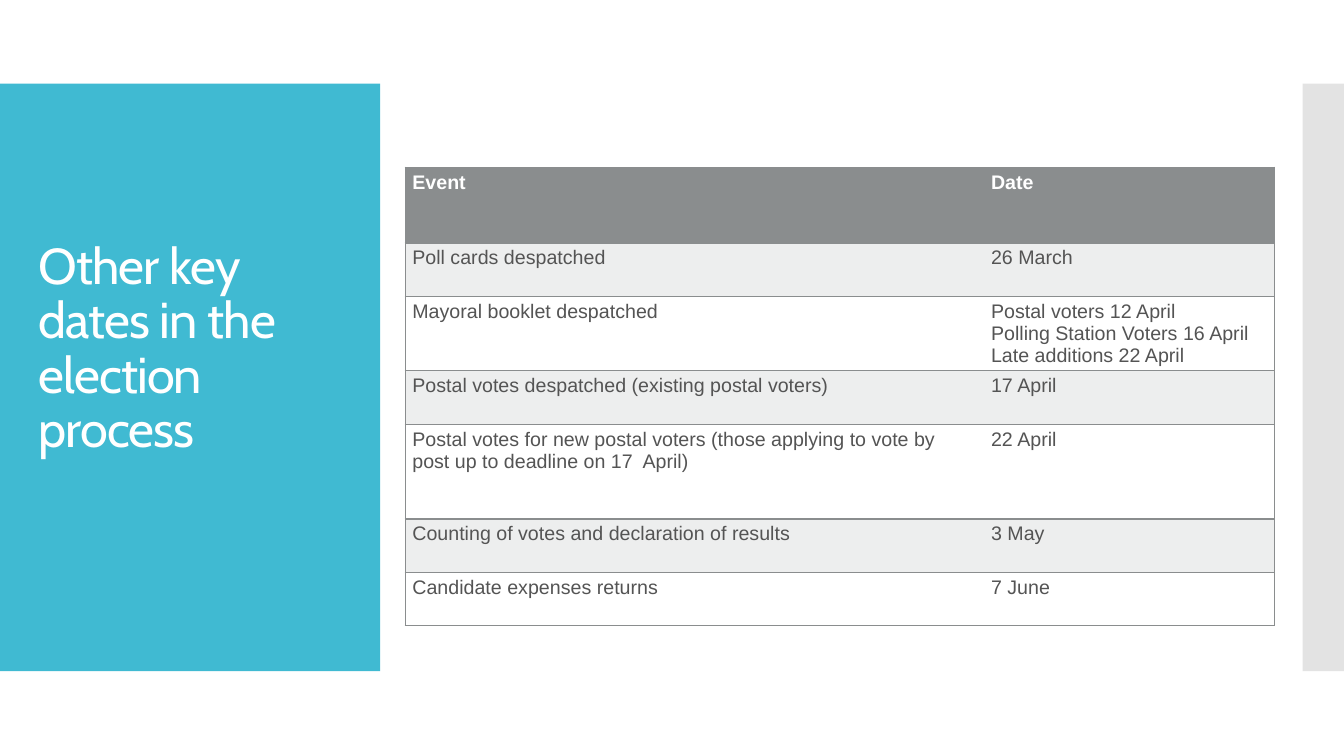
import pptx
import pptx.dml.color
import pptx.enum.shapes
import pptx.enum.text
import pptx.oxml
import pptx.oxml.ns
import pptx.util
from pptx.util import Inches

TEAL, SIDE_GREY, RULE_GREY = "40BAD2", "C8C8C8", "8A8D8E"
BAND_GREY, TEXT_GREY, WHITE = "EDEEEE", "545454", "FFFFFF"

KEY_DATES = [
    ("Event", "Date"),
    ("Poll cards despatched", "26 March"),
    ("Mayoral booklet despatched",
     "Postal voters 12 April\nPolling Station Voters 16 April\nLate additions 22 April"),
    ("Postal votes despatched (existing postal voters)", "17 April"),
    ("Postal votes for new postal voters (those applying to vote by post "
     "up to deadline on 17  April)", "22 April"),
    ("Counting of votes and declaration of results", "3 May"),
    ("Candidate expenses returns", "7 June"),
]
COLUMN_WIDTHS = (5.74, 2.88)
ROW_HEIGHTS = (0.75, 0.53, 0.74, 0.53, 0.94, 0.53, 0.53)

TITLE_FRAME = {
    "word_wrap": True,
    "auto_size": pptx.enum.text.MSO_AUTO_SIZE.NONE,
    "vertical_anchor": pptx.enum.text.MSO_ANCHOR.MIDDLE,
    "margin_bottom": Inches(0.6),
}
TITLE_PARAGRAPH = {"alignment": pptx.enum.text.PP_ALIGN.LEFT, "line_spacing": 0.9}
TITLE_FONT = {"name": "Cabin", "size": pptx.util.Pt(36)}
CELL_FORMAT = {
    "margin_left": Inches(0.07), "margin_right": Inches(0.07),
    "margin_top": Inches(0.04), "margin_bottom": Inches(0.04),
    "vertical_anchor": pptx.enum.text.MSO_ANCHOR.TOP,
}
CELL_FONT = {"name": "Arial", "size": pptx.util.Pt(14)}
TABLE_FORMAT = {"first_row": False, "horz_banding": False}


def set_attributes(target, values):
    for name, value in values.items():
        setattr(target, name, value)


def set_color(color_owner, hex_color):
    """Colour a font, or a fill that is already solid."""
    color = color_owner.color if hasattr(color_owner, "color") else color_owner.fore_color
    color.rgb = pptx.dml.color.RGBColor.from_string(hex_color)


def add_panel(slide, left, top, width, height, hex_color, opacity=100):
    """Add a flat rectangle behind the title."""
    panel = slide.shapes.add_shape(
        pptx.enum.shapes.MSO_SHAPE.RECTANGLE,
        Inches(left), Inches(top), Inches(width), Inches(height))
    panel.shadow.inherit = False
    panel.line.fill.background()
    panel.fill.solid()
    set_color(panel.fill, hex_color)
    if opacity < 100:
        color = panel.element.spPr.find(".//" + pptx.oxml.ns.qn("a:srgbClr"))
        alpha = pptx.oxml.parse_xml(
            f'<a:alpha {pptx.oxml.ns.nsdecls("a")} val="{opacity * 1000}"/>')
        color.append(alpha)
    slide.shapes.title.element.addprevious(panel.element)


def add_title_panel(slide, left, top, width, height):
    add_panel(slide, left, top, width, height, TEAL)
    title = slide.shapes.title
    set_attributes(title, {
        "left": Inches(left + 0.28), "top": Inches(top + 0.4),
        "width": Inches(width - 0.55), "height": Inches(height - 0.8),
    })
    title.text = "Other key dates in the election process"
    set_attributes(title.text_frame, TITLE_FRAME)
    paragraph = title.text_frame.paragraphs[0]
    set_attributes(paragraph, TITLE_PARAGRAPH)
    font = paragraph.runs[0].font
    set_attributes(font, TITLE_FONT)
    set_color(font, WHITE)
    paragraph.runs[0].font._element.set("spc", "-60")


def set_borders(cell, visible_sides):
    """Rule the named sides (L, R, T, B) and clear the others."""
    properties = cell._tc.get_or_add_tcPr()
    for side in "LRTB":
        paint = (f'<a:solidFill><a:srgbClr val="{RULE_GREY}"/></a:solidFill>'
                 if side in visible_sides else "<a:noFill/>")
        properties.append(pptx.oxml.parse_xml(
            f'<a:ln{side} {pptx.oxml.ns.nsdecls("a")} w="12700">{paint}</a:ln{side}>'))


def format_cell(cell, text, row, column):
    is_header = row == 0
    cell.text = text
    set_attributes(cell, CELL_FORMAT)
    set_borders(cell, "TB" + "LR"[column])
    cell.fill.solid()
    set_color(cell.fill, RULE_GREY if is_header else BAND_GREY if row % 2 else WHITE)
    for paragraph in cell.text_frame.paragraphs:
        font = paragraph.runs[0].font
        set_attributes(font, {**CELL_FONT, "bold": is_header})
        set_color(font, WHITE if is_header else TEXT_GREY)


def add_dates_table(slide, left, top):
    dates = slide.shapes.add_table(
        len(KEY_DATES), len(COLUMN_WIDTHS), Inches(left), Inches(top),
        Inches(sum(COLUMN_WIDTHS)), Inches(sum(ROW_HEIGHTS))).table
    set_attributes(dates, TABLE_FORMAT)
    for column, width in zip(dates.columns, COLUMN_WIDTHS):
        column.width = Inches(width)
    for row, height in zip(dates.rows, ROW_HEIGHTS):
        row.height = Inches(height)
    for row, entry in enumerate(KEY_DATES):
        for column, text in enumerate(entry):
            format_cell(dates.cell(row, column), text, row, column)


def main():
    presentation = pptx.Presentation()
    set_attributes(presentation, {
        "slide_width": Inches(13.33), "slide_height": Inches(7.5)})
    slide = presentation.slides.add_slide(presentation.slide_layouts[5])
    add_title_panel(slide, 0, 0.83, 3.77, 5.83)
    add_panel(slide, 12.92, 0.83, 0.41, 5.83, SIDE_GREY, opacity=50)
    add_dates_table(slide, 4.02, 1.66)
    presentation.save("out.pptx")


if __name__ == "__main__":
    main()
